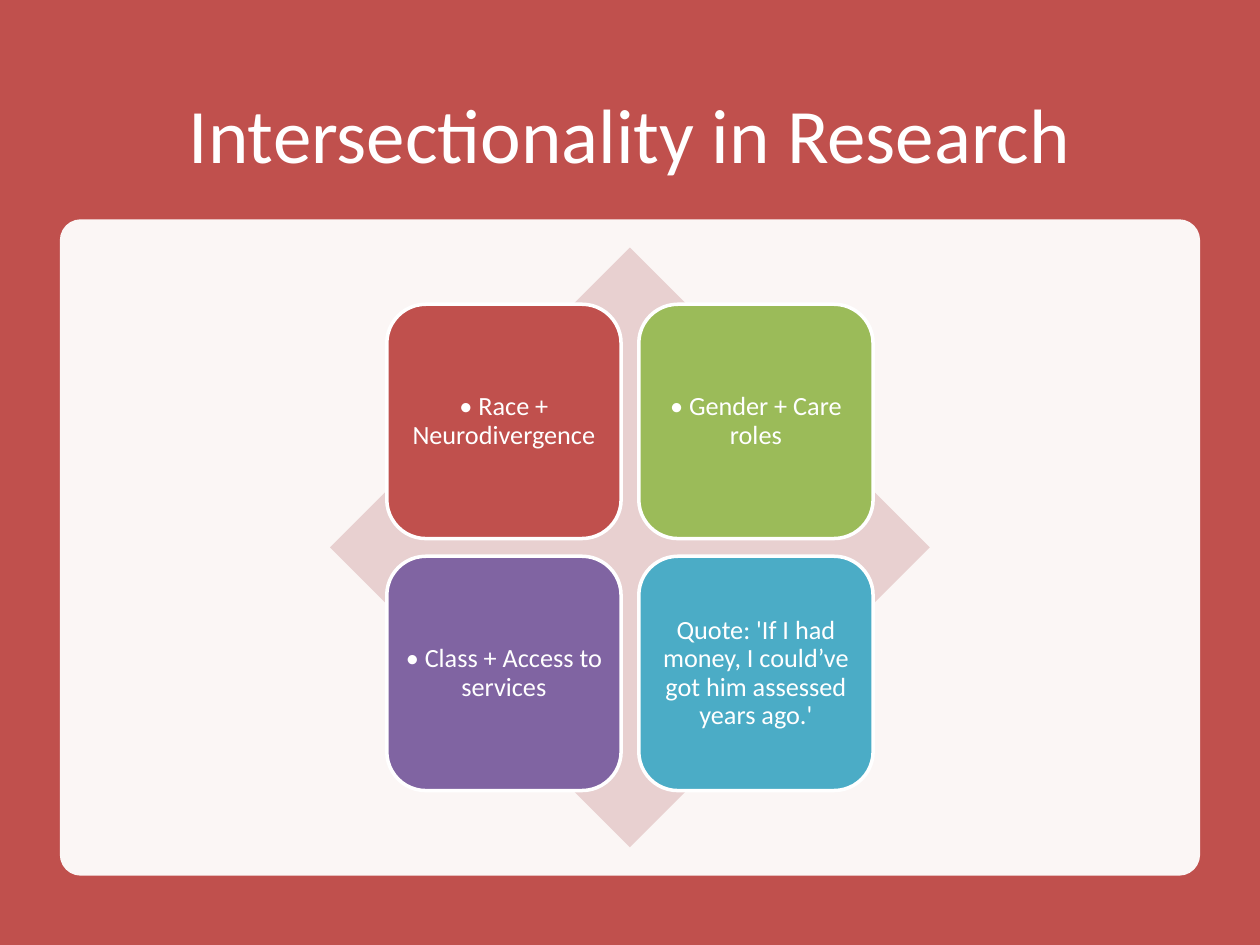
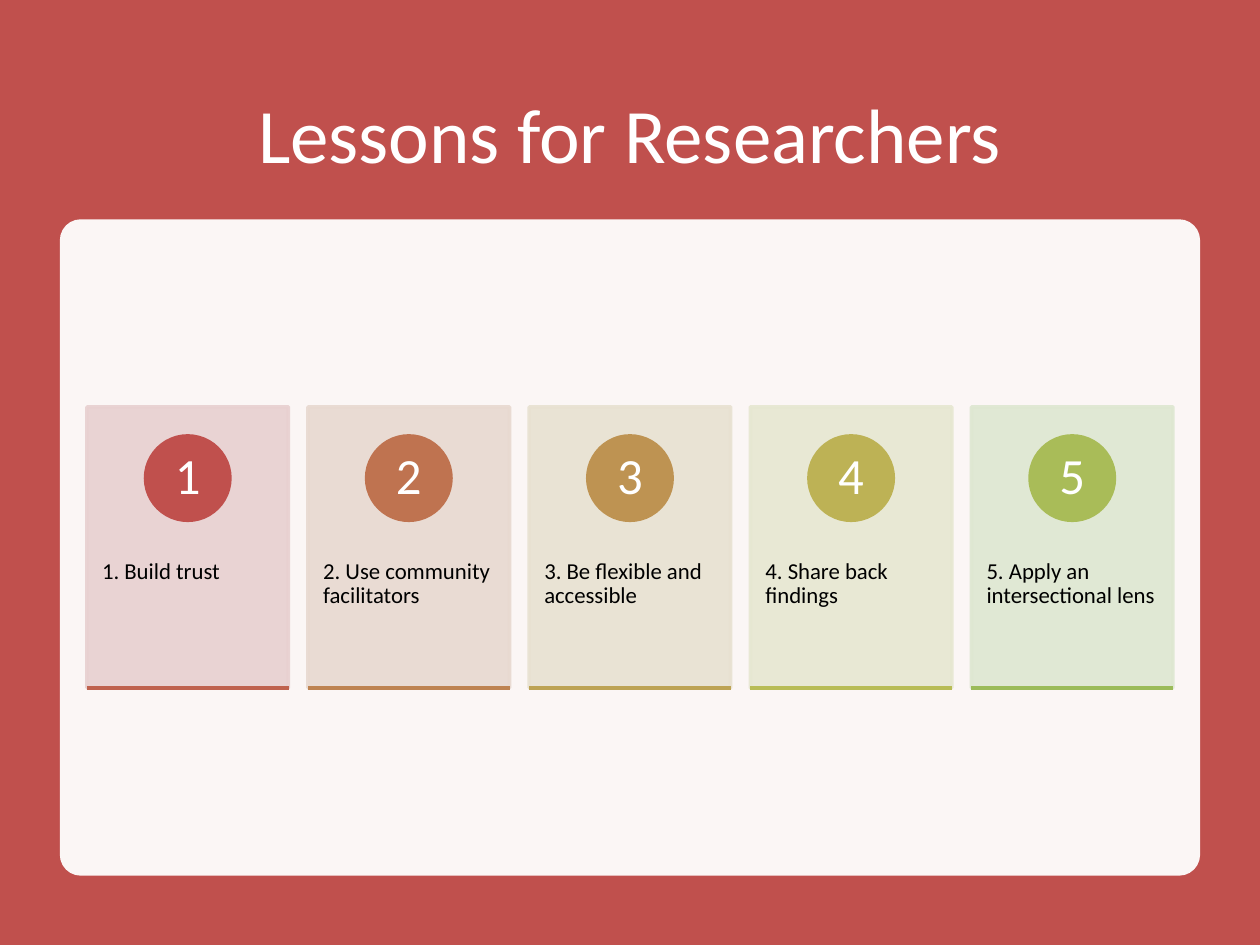
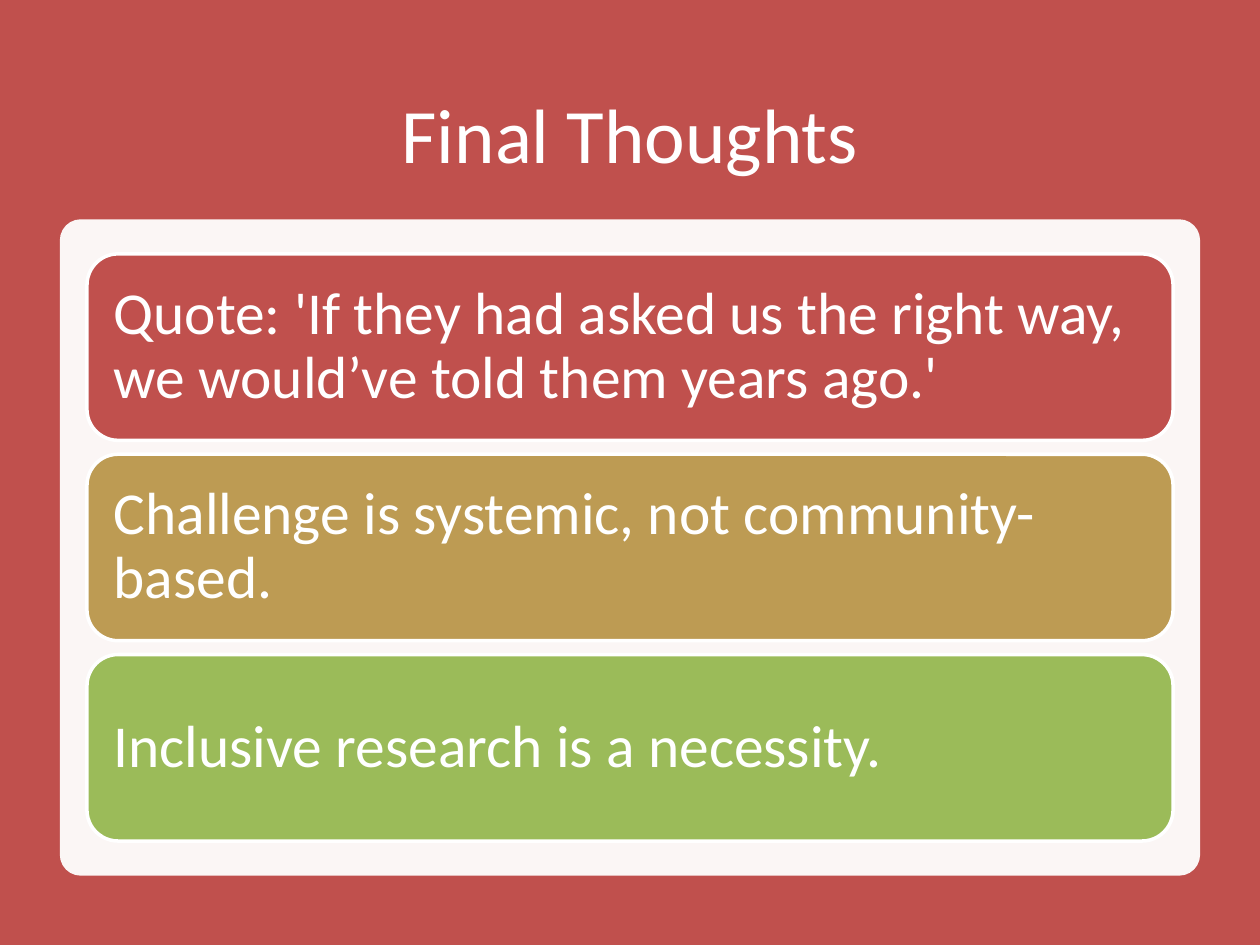
from lxml.etree import SubElement
from pptx import Presentation
from pptx.dml.color import RGBColor
from pptx.enum.shapes import MSO_CONNECTOR, MSO_SHAPE
from pptx.enum.text import MSO_ANCHOR, PP_ALIGN
from pptx.oxml.ns import qn
from pptx.util import Inches, Pt

# Colours and font
RED = RGBColor(0xC0, 0x50, 0x4D)
GREEN = RGBColor(0x9B, 0xBB, 0x59)
PURPLE = RGBColor(0x80, 0x64, 0xA2)
TEAL = RGBColor(0x4B, 0xAC, 0xC6)
GOLD = RGBColor(0xBD, 0x9B, 0x53)
PINK = RGBColor(0xE8, 0xD0, 0xD0)
WHITE = RGBColor(0xFF, 0xFF, 0xFF)
BLACK = RGBColor(0x00, 0x00, 0x00)
FONT = "Calibri"

# Content
THEMES = [  # two per row
    ("• Race + Neurodivergence", RED),
    ("• Gender + Care roles", GREEN),
    ("• Class + Access to services", PURPLE),
    ("Quote: 'If I had money, I could’ve got him assessed years ago.'", TEAL),
]
LESSONS = [  # text, card, badge and rule colours
    ("Build trust", PINK, RED, RGBColor(0xBF, 0x62, 0x4E)),
    ("Use community facilitators", RGBColor(0xE8, 0xD9, 0xD0),
     RGBColor(0xBF, 0x73, 0x50), RGBColor(0xBE, 0x83, 0x51)),
    ("Be flexible and accessible", RGBColor(0xE8, 0xE1, 0xD1),
     RGBColor(0xBE, 0x93, 0x52), RGBColor(0xBD, 0xA3, 0x54)),
    ("Share back findings", RGBColor(0xE6, 0xE7, 0xD1),
     RGBColor(0xBD, 0xB2, 0x55), RGBColor(0xB8, 0xBC, 0x56)),
    ("Apply an intersectional lens", RGBColor(0xDE, 0xE7, 0xD1),
     RGBColor(0xA9, 0xBC, 0x58), GREEN),
]
THOUGHTS = [
    ("Quote: 'If they had asked us the right way, we would’ve told them years ago.'", RED),
    ("Challenge is systemic, not community-based.", GOLD),
    ("Inclusive research is a necessity.", GREEN),
]

# Layout, in inches
WIDTH, HEIGHT = 10, 7.5
CONTENT_W = 8.62
LEFT = (WIDTH - CONTENT_W) / 2
PANEL_TOP, PANEL_W, PANEL_H = 1.74, 9.05, 5.21
MID_X, MID_Y = WIDTH / 2, PANEL_TOP + PANEL_H / 2


def spread(count, size, gap, middle):
    """Starts of equal parts with equal gaps, centred on middle."""
    first = middle - (count * size + (count - 1) * gap) / 2
    return [first + i * (size + gap) for i in range(count)]


def add_box(s, kind, x, y, w, h, fill, line=None, opacity=None):
    sp = s.shapes.add_shape(kind, Inches(x), Inches(y), Inches(w), Inches(h))
    sp.shadow.inherit = False
    sp.fill.solid()
    sp.fill.fore_color.rgb = fill
    if line is None:
        sp.line.fill.background()
    else:
        sp.line.color.rgb = line
        sp.line.width = Pt(2)
    if opacity:
        for colour in sp._element.spPr.iter(qn("a:srgbClr")):
            SubElement(colour, qn("a:alpha"), val=str(opacity * 1000))
    return sp


def set_text(sp, text, size, insets, color=WHITE, align=PP_ALIGN.LEFT,
             anchor=MSO_ANCHOR.MIDDLE, spacing=0.9):
    tf = sp.text_frame
    tf.word_wrap = True
    tf.vertical_anchor = anchor
    tf.margin_left, tf.margin_top, tf.margin_right, tf.margin_bottom = map(Inches, insets)
    p = tf.paragraphs[0]
    p.text = text
    p.alignment = align
    p.line_spacing = spacing
    p.font.name = FONT
    p.font.size = Pt(size)
    p.font.color.rgb = color


def add_rule(s, x, y, w, color):
    rule = s.shapes.add_connector(MSO_CONNECTOR.STRAIGHT, Inches(x), Inches(y),
                                  Inches(x + w), Inches(y))
    rule.line.color.rgb = color
    rule.line.width = Pt(2)
    SubElement(rule._element.spPr, qn("a:effectLst"))


def add_slide(prs, heading):
    """Red backdrop, white title and pale panel."""
    s = prs.slides.add_slide(prs.slide_layouts[5])
    title = s.shapes.title
    backdrop = add_box(s, MSO_SHAPE.RECTANGLE, 0, 0, WIDTH, HEIGHT, RED)
    title._element.addprevious(backdrop._element)
    title.left, title.top = Inches(LEFT), Inches(0.5)
    title.width, title.height = Inches(CONTENT_W), Inches(1.1)
    set_text(title, heading, 44, (0.1, 0.05, 0.1, 0.05), align=PP_ALIGN.CENTER, spacing=1.0)
    panel = add_box(s, MSO_SHAPE.ROUNDED_RECTANGLE, MID_X - PANEL_W / 2, PANEL_TOP,
                    PANEL_W, PANEL_H, WHITE, opacity=95)
    panel.adjustments[0] = 0.032
    return s


def add_theme_matrix(s):
    diamond, side, gap = 4.76, 1.86, 0.14
    add_box(s, MSO_SHAPE.DIAMOND, MID_X - diamond / 2, MID_Y - diamond / 2,
            diamond, diamond, PINK)
    columns, rows = spread(2, side, gap, MID_X), spread(2, side, gap, MID_Y)
    for i, (text, color) in enumerate(THEMES):
        sp = add_box(s, MSO_SHAPE.ROUNDED_RECTANGLE, columns[i % 2], rows[i // 2],
                     side, side, color, WHITE)
        set_text(sp, text, 15, [0.06] * 4, align=PP_ALIGN.CENTER)


def add_lesson_cards(s):
    card_w, card_h, badge = 1.6, 2.23, 0.67
    count = len(LESSONS)
    gap = (CONTENT_W - count * card_w) / (count - 1)
    top = MID_Y - card_h / 2
    columns = spread(count, card_w, gap, MID_X)
    for number, (x, lesson) in enumerate(zip(columns, LESSONS), 1):
        text, card_color, badge_color, rule_color = lesson
        card = add_box(s, MSO_SHAPE.RECTANGLE, x, top, card_w, card_h,
                       card_color, card_color, opacity=90)
        set_text(card, f"{number}. {text}", 13, (0.12, 1.21, 0.12, 0.36), BLACK,
                 anchor=MSO_ANCHOR.TOP)
        circle = add_box(s, MSO_SHAPE.OVAL, x + (card_w - badge) / 2, top + 0.23,
                         badge, badge, badge_color, badge_color)
        set_text(circle, str(number), 29, (0.05, 0.01, 0.05, 0.01), align=PP_ALIGN.CENTER)
        add_rule(s, x, top + card_h, card_w, rule_color)


def add_thought_bars(s):
    bar_h, gap = 1.48, 0.11
    for y, (text, color) in zip(spread(len(THOUGHTS), bar_h, gap, MID_Y), THOUGHTS):
        bar = add_box(s, MSO_SHAPE.ROUNDED_RECTANGLE, LEFT, y, CONTENT_W, bar_h,
                      color, WHITE)
        set_text(bar, text, 34, [0.14] * 4)


def main():
    prs = Presentation()
    prs.slide_width, prs.slide_height = Inches(WIDTH), Inches(HEIGHT)
    add_theme_matrix(add_slide(prs, "Intersectionality in Research"))
    add_lesson_cards(add_slide(prs, "Lessons for Researchers"))
    add_thought_bars(add_slide(prs, "Final Thoughts"))
    prs.save("out.pptx")


if __name__ == "__main__":
    main()
